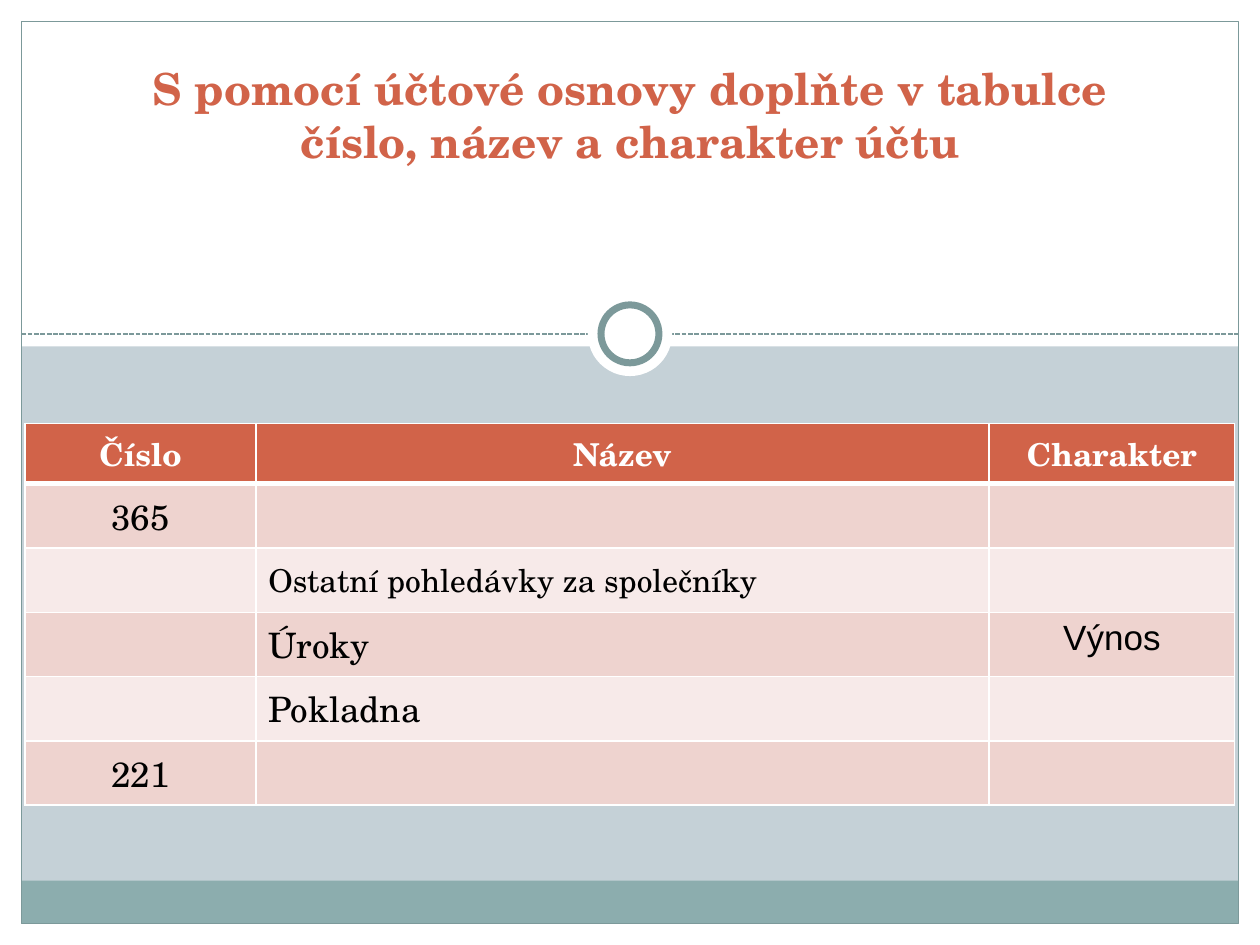
from typing import NamedTuple, Optional

from lxml.etree import SubElement
from pptx import Presentation
from pptx.dml.color import RGBColor
from pptx.enum.dml import MSO_LINE
from pptx.enum.shapes import MSO_CONNECTOR, MSO_SHAPE
from pptx.enum.text import MSO_ANCHOR, PP_ALIGN
from pptx.oxml.ns import qn
from pptx.util import Inches, Pt

WIDE, HIGH = 10, 7.5
EDGE = 0.17
RULE = 2.65
SERIF, SANS = "TeX Gyre Schola", "Arial"
WHITE, BLACK, RUST, TEAL = "FFFFFF", "000000", "D16349", "7C999A"
BANDS = ("F7EAE9", "EED3CF")


class Part(NamedTuple):
    kind: MSO_SHAPE
    left: float
    top: float
    width: float
    height: float
    fill: Optional[str] = None
    line: Optional[str] = None
    weight: float = 0


class Entry(NamedTuple):
    text: str
    size: float = 20
    font: str = SERIF
    align: PP_ALIGN = PP_ALIGN.CENTER
    anchor: MSO_ANCHOR = MSO_ANCHOR.MIDDLE


def paint(target, color: str) -> None:
    """Give a fill or line format a solid colour."""
    fill = getattr(target, "fill", target)
    fill.solid()
    fill.fore_color.rgb = RGBColor.from_string(color)


def draw(slide, part: Part) -> None:
    box = map(Inches, (part.left, part.top, part.width, part.height))
    shape = slide.shapes.add_shape(part.kind, *box)
    shape.shadow.inherit = False
    if part.fill:
        paint(shape.fill, part.fill)
    else:
        shape.fill.background()
    if part.line:
        paint(shape.line, part.line)
        shape.line.width = Pt(part.weight)
    else:
        shape.line.fill.background()


def write(frame, entry: Entry, color: str, bold: bool) -> None:
    frame.text = entry.text
    line = frame.paragraphs[0]
    line.alignment = entry.align
    for run in line.runs:
        font = run.font
        font.name, font.size, font.bold = entry.font, Pt(entry.size), bold
        font.color.rgb = RGBColor.from_string(color)


def border(cell, top: float, bottom: float) -> None:
    """Put white borders ahead of the cell's fill."""
    props = cell._tc.get_or_add_tcPr()
    sides = (("a:lnL", 1), ("a:lnR", 1), ("a:lnT", top), ("a:lnB", bottom))
    for spot, (tag, weight) in enumerate(sides):
        edge = SubElement(props, qn(tag), w=str(Pt(weight)))
        solid = SubElement(edge, qn("a:solidFill"))
        SubElement(solid, qn("a:srgbClr"), val=WHITE)
        props.insert(spot, edge)


def fill_table(slide, rows: list[tuple]) -> None:
    cols = (1.83, 5.82, 1.95)
    tall = [0.48] + [0.51] * (len(rows) - 1)
    box = map(Inches, (0.2, 3.36, sum(cols), sum(tall)))
    table = slide.shapes.add_table(len(rows), len(cols), *box).table
    for col, width in zip(table.columns, cols):
        col.width = Inches(width)
    for r, entries in enumerate(rows):
        table.rows[r].height = Inches(tall[r])
        head = r == 0
        for c, entry in enumerate(entries):
            cell = table.cell(r, c)
            paint(cell.fill, RUST if head else BANDS[r % 2])
            border(cell, 3 if r == 1 else 1, 3 if head else 1)
            if entry:
                cell.vertical_anchor = entry.anchor
                write(cell.text_frame, entry, WHITE if head else BLACK, head)


def main() -> None:
    deck = Presentation()
    deck.slide_width, deck.slide_height = Inches(WIDE), Inches(HIGH)
    slide = deck.slides.add_slide(deck.slide_layouts[6])
    paint(slide.background.fill, "C5D1D7")

    # White margins, upper panel and footer band
    rect, oval = MSO_SHAPE.RECTANGLE, MSO_SHAPE.OVAL
    inner, deep = WIDE - 2 * EDGE, HIGH - 2 * EDGE
    for part in (
        Part(rect, 0, HIGH - EDGE, WIDE, EDGE, WHITE),
        Part(rect, WIDE - EDGE, 0, EDGE, HIGH, WHITE),
        Part(rect, 0, 0, EDGE, HIGH, WHITE),
        Part(rect, 0, 0, WIDE, 2.75, WHITE),
        Part(rect, EDGE, 6.99, inner, 0.34, "8CADAE"),
    ):
        draw(slide, part)

    # Dashed divider
    ends = map(Inches, (EDGE, RULE, WIDE - EDGE, RULE))
    rule = slide.shapes.add_connector(MSO_CONNECTOR.STRAIGHT, *ends)
    paint(rule.line, TEAL)
    rule.line.width = Pt(0.9)
    rule.line.dash_style = MSO_LINE.SQUARE_DOT
    SubElement(rule._element.spPr, qn("a:effectLst"))

    # Frame, then the ring centred on the divider
    draw(slide, Part(rect, EDGE, EDGE, inner, deep, line=TEAL, weight=0.75))
    for size, line in ((0.67, None), (0.46, TEAL)):
        left, top = (WIDE - size) / 2, RULE - size / 2
        draw(slide, Part(oval, left, top, size, size, WHITE, line, 4))

    # Title
    box = map(Inches, (0.75, 0.36, 8.5, 1.02))
    frame = slide.shapes.add_textbox(*box).text_frame
    frame.word_wrap = True
    frame.vertical_anchor = MSO_ANCHOR.BOTTOM
    title = "S pomocí účtové osnovy doplňte v tabulce číslo, název a charakter účtu"
    write(frame, Entry(title, 25.2), RUST, True)

    # Accounts table
    left = PP_ALIGN.LEFT
    fill_table(slide, [
        tuple(Entry(name, 18) for name in ("Číslo", "Název", "Charakter")),
        (Entry("365"), None, None),
        (None, Entry("Ostatní pohledávky za společníky", 18, align=left), None),
        (None, Entry("Úroky", align=left),
         Entry("Výnos", font=SANS, anchor=MSO_ANCHOR.TOP)),
        (None, Entry("Pokladna", align=left), None),
        (Entry("221"), None, None),
    ])

    deck.save("out.pptx")


if __name__ == "__main__":
    main()
